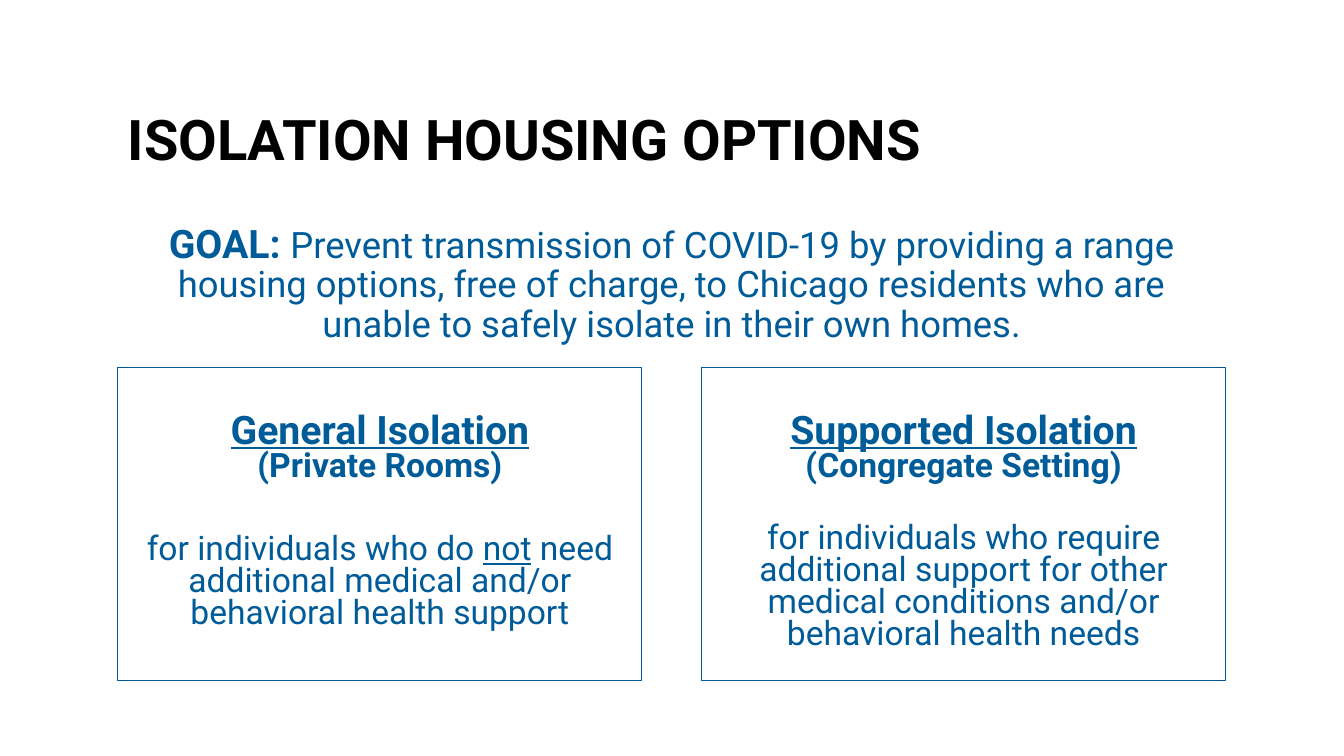
from dataclasses import dataclass

import pptx
import pptx.dml.color
import pptx.enum.shapes
import pptx.enum.text
import pptx.util
from pptx.util import Cm, Pt


@dataclass(frozen=True)
class Theme:
    font: str = "Roboto"
    black: str = "000000"
    blue: str = "005B99"
    border: str = "005899"
    title: int = 40
    heading: int = 28
    goal: int = 26
    body: int = 24


THEME = Theme()


def color(value):
    return pptx.dml.color.RGBColor.from_string(value)


def style_paragraph(para, size, ink, bold=False, spacing=0.9, before=0, centered=True):
    align = pptx.enum.text.PP_ALIGN
    para.alignment = align.CENTER if centered else align.LEFT
    para.line_spacing = spacing
    para.space_before = Pt(before)
    para.font.name = THEME.font
    para.font.size = Pt(size)
    para.font.bold = bold
    para.font.color.rgb = color(ink)


def add_span(para, text):
    span = para.add_run()
    span.text = text
    return span


def add_title(page, left, top, width, height, text):
    box = page.shapes.add_textbox(Cm(left), Cm(top), Cm(width), Cm(height))
    frame = box.text_frame
    frame.word_wrap = True
    frame.vertical_anchor = pptx.enum.text.MSO_ANCHOR.MIDDLE
    para = frame.paragraphs[0]
    add_span(para, text)
    style_paragraph(para, THEME.title, THEME.black, bold=True, centered=False)


def add_goal(page, left, top, width, height, label, text):
    box = page.shapes.add_textbox(Cm(left), Cm(top), Cm(width), Cm(height))
    frame = box.text_frame
    frame.word_wrap = True
    frame.margin_top = Cm(1.26)
    para = frame.paragraphs[0]
    style_paragraph(para, THEME.goal, THEME.blue)
    lead = add_span(para, label)
    lead.font.bold = True
    lead.font.size = Pt(THEME.heading)
    add_span(para, text)


def add_option(page, left, top, width, height, heading, setting, gap, parts):
    box = page.shapes.add_shape(
        pptx.enum.shapes.MSO_SHAPE.RECTANGLE, Cm(left), Cm(top), Cm(width), Cm(height)
    )
    box.shadow.inherit = False
    box.fill.background()
    box.line.color.rgb = color(THEME.border)
    box.line.width = Pt(0.75)
    frame = box.text_frame
    frame.word_wrap = True
    frame.margin_top = Cm(1.17)
    frame.vertical_anchor = pptx.enum.text.MSO_ANCHOR.TOP

    para = frame.paragraphs[0]
    add_span(para, heading)
    style_paragraph(para, THEME.heading, THEME.blue, bold=True, spacing=0.8)
    para.font.underline = True
    para.runs[0].font.underline = True

    para = frame.add_paragraph()
    add_span(para, setting)
    style_paragraph(para, THEME.body, THEME.blue, bold=True, spacing=0.8)

    para = frame.add_paragraph()
    style_paragraph(para, THEME.body, THEME.blue, spacing=0.8, before=gap)
    for text, underlined in parts:
        span = add_span(para, text)
        if underlined:
            span.font.underline = True


def main():
    deck = pptx.Presentation()
    deck.slide_width = Cm(33.87)
    deck.slide_height = Cm(19.05)
    page = deck.slides.add_slide(deck.slide_layouts[6])

    left, width = 2.97, 27.94
    add_title(page, left, 1.35, width, 4.47, "ISOLATION HOUSING OPTIONS")
    add_goal(
        page, left, 4.39, width, 4.47, "GOAL: ",
        "Prevent transmission of COVID-19 by providing a range housing options, "
        "free of charge, to Chicago residents who are unable to safely isolate "
        "in their own homes.",
    )

    options = [
        ("General Isolation", "(Private Rooms)", 36, [
            ("for individuals who do ", False),
            ("not", True),
            (" need additional medical and/or behavioral health support", False),
        ]),
        ("Supported Isolation", "(Congregate Setting)", 28, [
            ("for individuals who require additional support for other medical "
             "conditions and/or behavioral health needs", False),
        ]),
    ]
    card_width, gutter = 13.21, 1.5
    for index, option in enumerate(options):
        card_left = left + index * (card_width + gutter)
        add_option(page, card_left, 9.27, card_width, 7.87, *option)

    deck.save("out.pptx")


if __name__ == "__main__":
    main()
